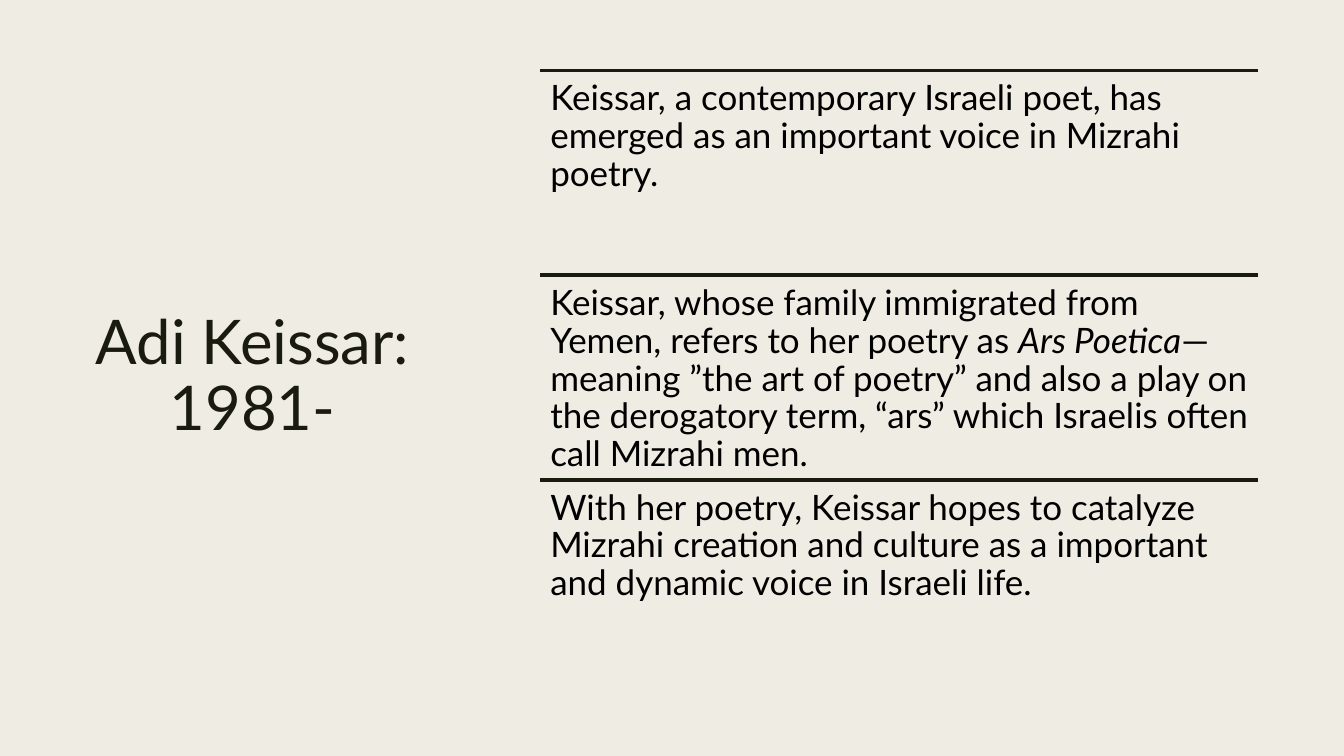
from dataclasses import dataclass

from lxml.etree import SubElement
from pptx import Presentation
from pptx.dml.color import RGBColor
from pptx.enum.shapes import MSO_CONNECTOR as Connector
from pptx.enum.text import MSO_ANCHOR as Anchor, MSO_AUTO_SIZE as AutoSize, PP_ALIGN as Align
from pptx.oxml.ns import qn
from pptx.slide import Slide
from pptx.text.text import _Run as Run
from pptx.util import Inches, Pt

COLOURS = {"background": "EFEDE3", "ink": "191B0E", "body": "000000"}
FONT = "Lato"
LEFT, TOP, WIDTH, ROW_HEIGHT = 5.36, 0.7, 7.12, 2.03


@dataclass
class Span:
    text: str
    italic: bool = False


STATEMENTS: list[list[Span]] = [
    [Span("Keissar, a contemporary Israeli poet, has emerged as an important "
          "voice in Mizrahi poetry.")],
    [Span("Keissar, whose family immigrated from Yemen, refers to her poetry as "),
     Span("Ars Poetica", italic=True),
     Span("—meaning ”the art of poetry” and also a play on the derogatory term, "
          "“ars” which Israelis often call Mizrahi men.")],
    [Span("With her poetry, Keissar hopes to catalyze Mizrahi creation and culture "
          "as a important and dynamic voice in Israeli life.")],
]


def colour(name: str) -> RGBColor:
    return RGBColor.from_string(COLOURS[name])


def format_run(run: Run, size: float, colour_name: str, italic: bool = False) -> None:
    run.font.name = FONT
    run.font.size = Pt(size)
    run.font.italic = italic
    run.font.color.rgb = colour(colour_name)


def add_title(page: Slide, text: str) -> None:
    title = page.shapes.title
    title.left, title.top = Inches(0.7), Inches(0.7)
    title.width, title.height = Inches(3.61), Inches(6.1)
    frame = title.text_frame
    frame.text = text
    frame.word_wrap = True
    frame.auto_size = AutoSize.NONE
    frame.vertical_anchor = Anchor.MIDDLE
    para = frame.paragraphs[0]
    para.alignment = Align.CENTER
    para.line_spacing = 0.89
    format_run(para.runs[0], 44, "ink")


def add_rule(page: Slide, top: float) -> None:
    rule = page.shapes.add_connector(
        Connector.STRAIGHT, Inches(LEFT), Inches(top), Inches(LEFT + WIDTH), Inches(top))
    rule.line.color.rgb = colour("ink")
    rule.line.width = Pt(2.75)
    SubElement(rule._element.spPr, qn("a:effectLst"))


def add_statement(page: Slide, top: float, spans: list[Span]) -> None:
    box = page.shapes.add_textbox(
        Inches(LEFT), Inches(top), Inches(WIDTH), Inches(ROW_HEIGHT))
    frame = box.text_frame
    frame.word_wrap = True
    frame.margin_left = frame.margin_right = Inches(0.1)
    frame.margin_top = frame.margin_bottom = Inches(0.1)
    para = frame.paragraphs[0]
    para.line_spacing = 0.9
    for span in spans:
        run = para.add_run()
        run.text = span.text
        format_run(run, 25, "body", span.italic)


def main() -> None:
    deck = Presentation()
    deck.slide_width, deck.slide_height = Inches(13.33), Inches(7.5)
    page = deck.slides.add_slide(deck.slide_layouts[5])
    page.background.fill.solid()
    page.background.fill.fore_color.rgb = colour("background")
    add_title(page, "Adi Keissar: 1981-")
    for index, spans in enumerate(STATEMENTS):
        top = TOP + index * ROW_HEIGHT
        add_rule(page, top)
        add_statement(page, top, spans)
    deck.save("out.pptx")


if __name__ == "__main__":
    main()
